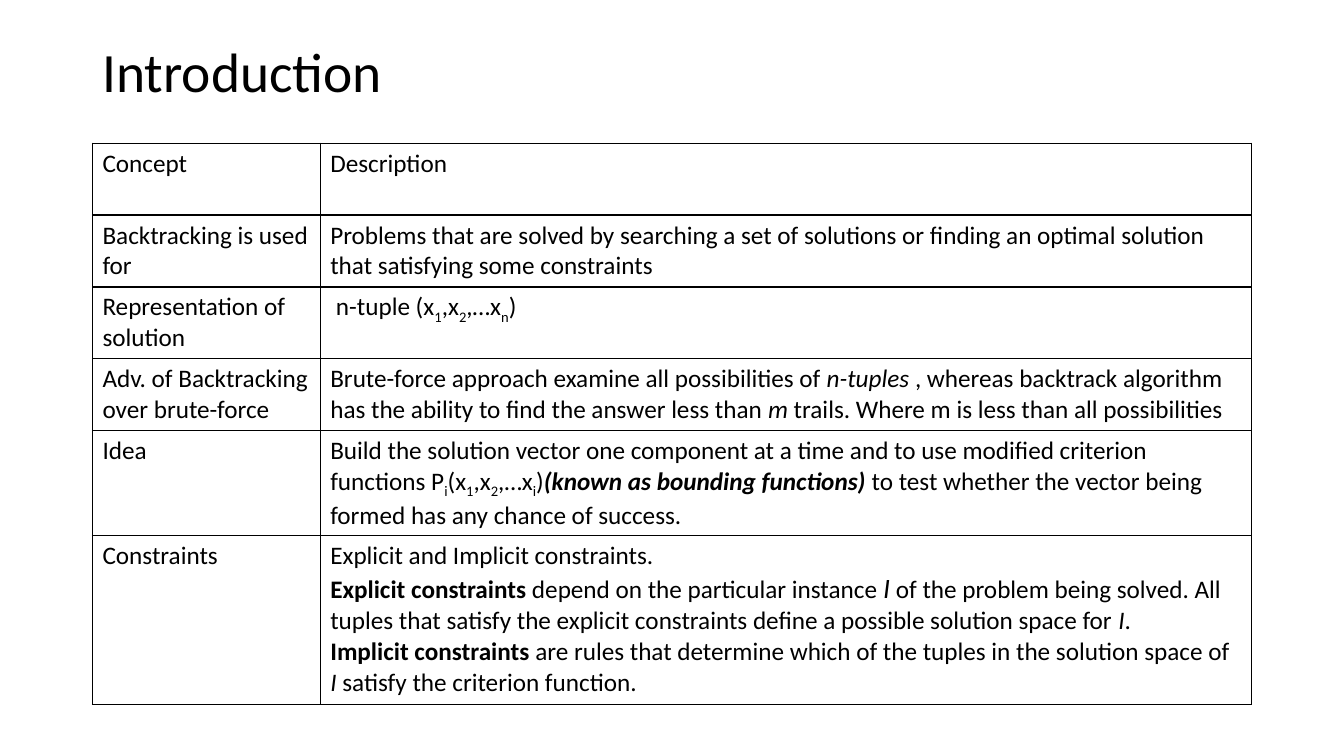
from dataclasses import dataclass

from lxml.etree import SubElement
from pptx import Presentation
from pptx.dml.color import RGBColor
from pptx.enum.text import MSO_ANCHOR
from pptx.oxml.ns import qn
from pptx.slide import Slide
from pptx.table import _Cell as Cell
from pptx.text.text import _Paragraph as Paragraph
from pptx.util import Cm, Pt

BLACK = RGBColor(0x00, 0x00, 0x00)
FONT = "Calibri"
TITLE_SIZE = 39.6
BODY_SIZE = 18
LEFT, WIDTH = Cm(2.33), Cm(29.21)
COLUMN_WIDTHS = Cm(5.74), Cm(23.47)
ROW_HEIGHTS = [Cm(1.81)] * 4 + [Cm(2.65), Cm(4.25)]
BORDER_WIDTH = Pt(1)


@dataclass(frozen=True)
class Span:
    text: str
    size: float = BODY_SIZE
    bold: bool = False
    italic: bool = False
    subscript: bool = False


@dataclass(frozen=True)
class Row:
    concept: str
    description: list[list[Span]]


def bold(text: str) -> Span:
    return Span(text, bold=True)


def italic(text: str, size: float = BODY_SIZE) -> Span:
    return Span(text, size=size, italic=True)


def sub(text: str) -> Span:
    return Span(text, subscript=True)


def vector(before: str, last: str) -> list[Span]:
    """Spans for (x1,x2,…x_last), with the given text in front of the x."""
    return [Span(before + "(x"), sub("1"), Span(",x"), sub("2"),
            Span(",…x"), sub(last), Span(")")]


ROWS = [
    Row("Concept", [[Span("Description")]]),
    Row("Backtracking is used for", [[
        Span("Problems that are solved by searching a set of solutions or finding "
             "an optimal solution that satisfying some constraints")]]),
    Row("Representation of solution", [vector(" n-tuple ", "n")]),
    Row("Adv. of Backtracking over brute-force", [[
        Span("Brute-force approach examine all possibilities of "),
        italic("n-tuples"),
        Span(" , whereas backtrack algorithm has the ability to find the answer less than "),
        italic("m"),
        Span(" trails. Where m is less than all possibilities")]]),
    Row("Idea", [[
        Span("Build the solution vector one component at a time and to use modified "
             "criterion functions P"),
        sub("i"),
        *vector("", "i"),
        Span("(known as bounding functions)", bold=True, italic=True),
        Span(" to test whether the vector being formed has any chance of success.")]]),
    Row("Constraints", [
        [Span("Explicit and Implicit constraints.")],
        [bold("Explicit constraints"),
         Span(" depend on the particular instance "),
         italic("I", 20),
         Span(" of the problem being solved. All tuples that satisfy the explicit "
              "constraints define a possible solution space for "),
         italic("I"),
         Span(".")],
        [bold("Implicit constraints"),
         Span(" are rules that determine which of the tuples in the solution space of "),
         italic("I"),
         Span(" satisfy the criterion function.")]]),
]


def add_span(para: Paragraph, span: Span) -> None:
    run = para.add_run()
    run.text = span.text
    run.font.name = FONT
    run.font.size = Pt(span.size)
    run.font.bold = span.bold
    run.font.italic = span.italic
    run.font.color.rgb = BLACK
    if span.subscript:
        run._r.get_or_add_rPr().set("baseline", "-25000")


def draw_borders(cell: Cell) -> None:
    properties = cell._tc.get_or_add_tcPr()
    for side in ("lnL", "lnR", "lnT", "lnB"):
        line = SubElement(properties, qn(f"a:{side}"), w=str(BORDER_WIDTH))
        fill = SubElement(line, qn("a:solidFill"))
        SubElement(fill, qn("a:srgbClr"), val=str(BLACK))


def fill_cell(cell: Cell, paragraphs: list[list[Span]]) -> None:
    draw_borders(cell)
    cell.fill.background()
    frame = cell.text_frame
    for index, spans in enumerate(paragraphs):
        para = frame.add_paragraph() if index else frame.paragraphs[0]
        for span in spans:
            add_span(para, span)


def add_title(page: Slide, text: str) -> None:
    box = page.shapes.add_textbox(LEFT, Cm(1.02), WIDTH, Cm(1.7))
    frame = box.text_frame
    frame.word_wrap = True
    frame.vertical_anchor = MSO_ANCHOR.MIDDLE
    para = frame.paragraphs[0]
    para.line_spacing = 0.9
    add_span(para, Span(text, size=TITLE_SIZE))


def add_concept_table(page: Slide, rows: list[Row]) -> None:
    table = page.shapes.add_table(len(rows), len(COLUMN_WIDTHS), LEFT, Cm(3.61),
                                  WIDTH, sum(ROW_HEIGHTS)).table
    table.first_row = False
    table.horz_banding = False
    for column, width in zip(table.columns, COLUMN_WIDTHS):
        column.width = width
    for line, height, row in zip(table.rows, ROW_HEIGHTS, rows):
        line.height = height
        fill_cell(line.cells[0], [[Span(row.concept)]])
        fill_cell(line.cells[1], row.description)


def main() -> None:
    deck = Presentation()
    deck.slide_width, deck.slide_height = Cm(33.87), Cm(19.05)
    page = deck.slides.add_slide(deck.slide_layouts[6])
    add_title(page, "Introduction")
    add_concept_table(page, ROWS)
    deck.save("out.pptx")


if __name__ == "__main__":
    main()
